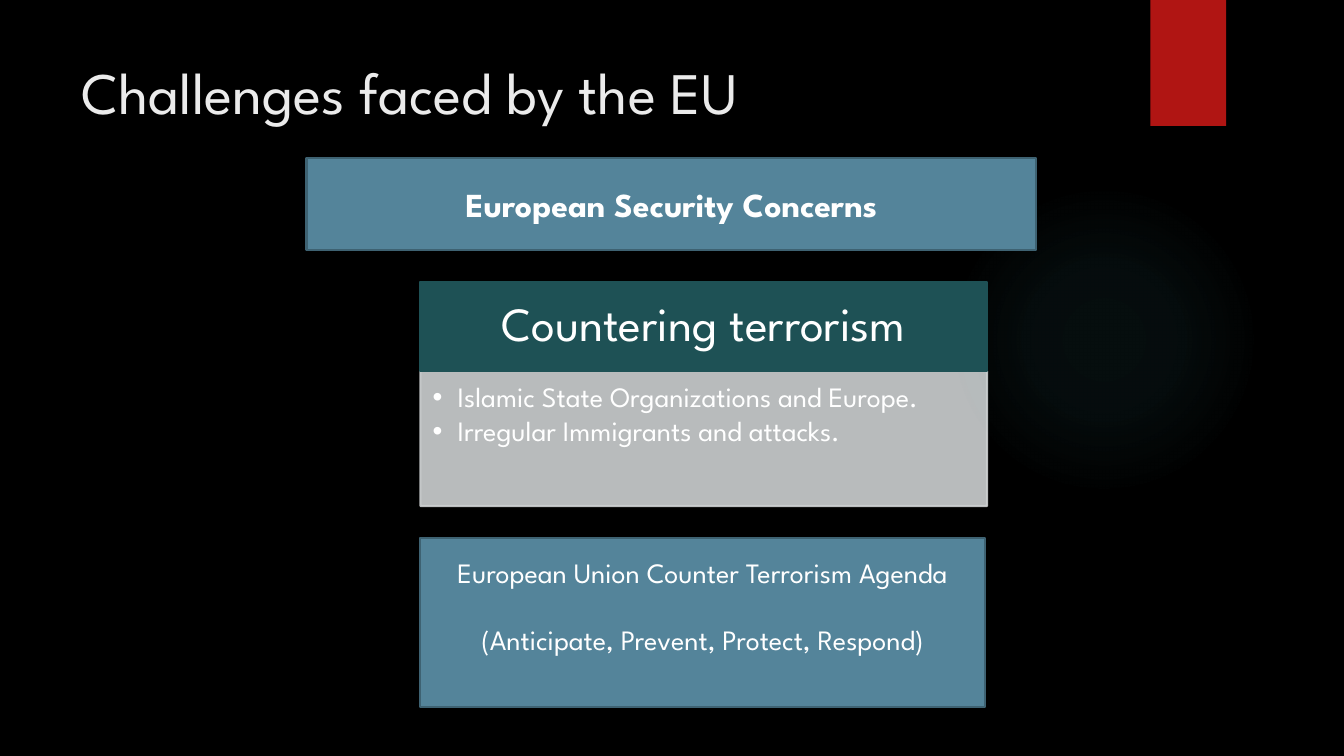
"""Build the slide on the security challenges faced by the EU."""
from dataclasses import dataclass

from lxml.etree import SubElement
from pptx import Presentation
from pptx.dml.color import RGBColor as Color
from pptx.enum.shapes import MSO_SHAPE as Preset
from pptx.enum.text import MSO_ANCHOR as Anchor, MSO_AUTO_SIZE as AutoSize, PP_ALIGN as Align
from pptx.oxml import parse_xml
from pptx.oxml.ns import nsdecls, qn
from pptx.util import Inches, Pt


@dataclass(frozen=True)
class Theme:
    font: str = "League Spartan"
    background: str = "000000"
    glow: str = "50B9C1"
    ribbon: str = "B01513"
    title: str = "EBEBEB"
    text: str = "FFFFFF"
    blue: str = "54849A"
    blue_edge: str = "3E6272"
    teal: str = "1E5155"
    grey: str = "CDD0D1"
    title_size: int = 42
    header_size: int = 34
    banner_size: int = 24
    body_size: int = 20
    edge_width: float = 1.5


theme = Theme()
presentation = Presentation()
presentation.slide_width, presentation.slide_height = Inches(13.33), Inches(7.5)
slide = presentation.slides.add_slide(presentation.slide_layouts[1])
slide.background.fill.solid()
slide.background.fill.fore_color.rgb = Color.from_string(theme.background)


def place(shape, box, fill=None, edge=None):
    """Place a shape by percentages of the slide and paint it."""
    left, top, width, height = box
    shape.left = int(presentation.slide_width * left / 100)
    shape.top = int(presentation.slide_height * top / 100)
    shape.width = int(presentation.slide_width * width / 100)
    shape.height = int(presentation.slide_height * height / 100)
    if fill:
        shape.fill.solid()
        shape.fill.fore_color.rgb = Color.from_string(fill)
    if edge:
        shape.line.color.rgb = Color.from_string(edge)
        shape.line.width = Pt(theme.edge_width)
    return shape


def write(shape, lines, size, color=theme.text, align=Align.CENTER, anchor=Anchor.MIDDLE, bold=False):
    """Write one paragraph per line and return the paragraphs."""
    frame = shape.text_frame
    frame.text = "\n".join(lines)
    frame.word_wrap = True
    frame.auto_size = AutoSize.NONE
    frame.vertical_anchor = anchor
    for paragraph in frame.paragraphs:
        paragraph.alignment = align
        paragraph.space_before = Pt(0)
        paragraph.font.name = theme.font
        paragraph.font.size = Pt(size)
        paragraph.font.bold = bold
        paragraph.font.color.rgb = Color.from_string(color)
    return frame.paragraphs


glow_box, ribbon_box = (70.59, 24.4, 23.11, 41.07), (85.6, 0, 5.63, 16.67)
glow, ribbon, banner, header, agenda = [
    place(slide.shapes.add_shape(preset, 0, 0, 0, 0), box, fill, edge)
    for preset, box, fill, edge in [
        (Preset.OVAL, glow_box, theme.glow, None),
        (Preset.RECTANGLE, ribbon_box, theme.ribbon, None),
        (Preset.RECTANGLE, (22.81, 20.93, 54.31, 12.13), theme.blue, theme.blue_edge),
        (Preset.RECTANGLE, (31.28, 37.33, 42.16, 11.73), theme.teal, theme.teal),
        (Preset.RECTANGLE, (31.28, 71.2, 42.01, 22.27), theme.blue, theme.blue_edge),
    ]
]
for shape in (glow, ribbon, banner, header, agenda):
    shape.shadow.inherit = False
for shape in (glow, ribbon):
    shape.line.fill.background()

stops = "".join(
    f'<a:gs pos="{position}000"><a:srgbClr val="{theme.glow}"><a:alpha val="{alpha}000"/></a:srgbClr></a:gs>'
    for position, alpha in [(0, 7), (36, 6), (69, 0), (100, 0)]
)
gradient = parse_xml(
    f'<a:gradFill {nsdecls("a")}><a:gsLst>{stops}</a:gsLst><a:path path="circle">'
    '<a:fillToRect l="50000" t="50000" r="50000" b="50000"/></a:path></a:gradFill>'
)
properties = glow._element.spPr
properties.replace(properties.find(qn("a:solidFill")), gradient)

title = place(slide.shapes.title, (5.33, 6.67, 77.19, 20.4))
write(title, ["Challenges faced by the EU"], theme.title_size, theme.title, Align.LEFT, Anchor.TOP)
write(banner, ["European Security Concerns"], theme.banner_size, bold=True)
write(header, ["Countering terrorism"], theme.header_size)[0].line_spacing = 0.9

threats = place(slide.placeholders[1], (31.28, 49.07, 42.16, 17.87), theme.grey, theme.grey)
for color in threats._element.spPr.iter(qn("a:srgbClr")):
    SubElement(color, qn("a:alpha"), val="90000")
frame = threats.text_frame
frame.margin_left = frame.margin_top = Inches(0.12)
frame.margin_right, frame.margin_bottom = Inches(0.16), Inches(0.17)
threat_lines = ["Islamic State Organizations and Europe.", "Irregular Immigrants and attacks."]
for paragraph in write(threats, threat_lines, theme.body_size, align=Align.LEFT, anchor=Anchor.TOP):
    paragraph.line_spacing = 0.9
    paragraph.space_after = Pt(3)
    indents = paragraph._p.get_or_add_pPr()
    indents.set("marL", str(Inches(0.25)))
    indents.set("indent", str(-Inches(0.25)))

agenda_lines = ["European Union Counter Terrorism Agenda", "(Anticipate, Prevent, Protect, Respond)"]
write(agenda, agenda_lines, theme.body_size)[0].space_after = Pt(24)
agenda.text_frame.margin_bottom = Inches(0.38)

presentation.save("out.pptx")
